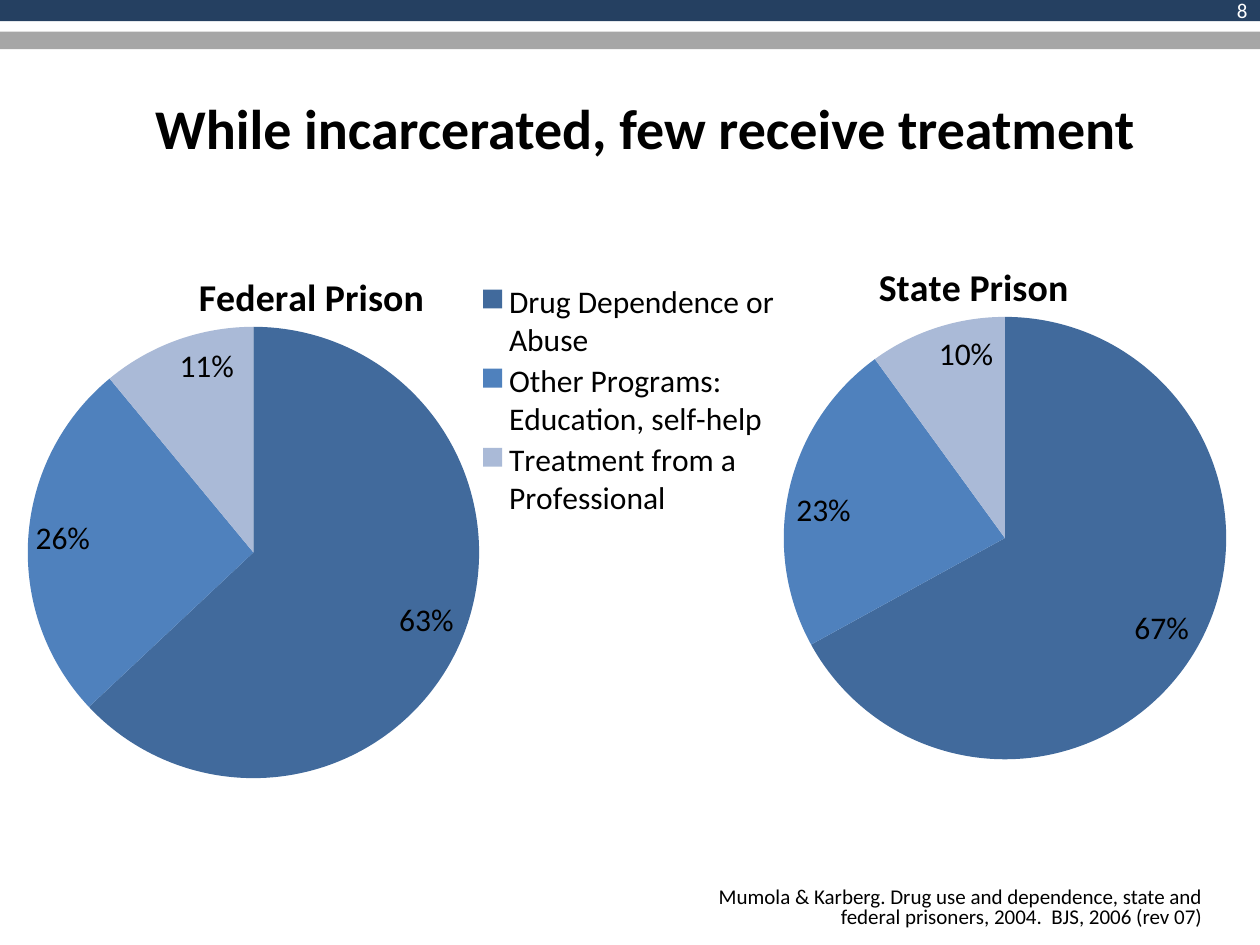
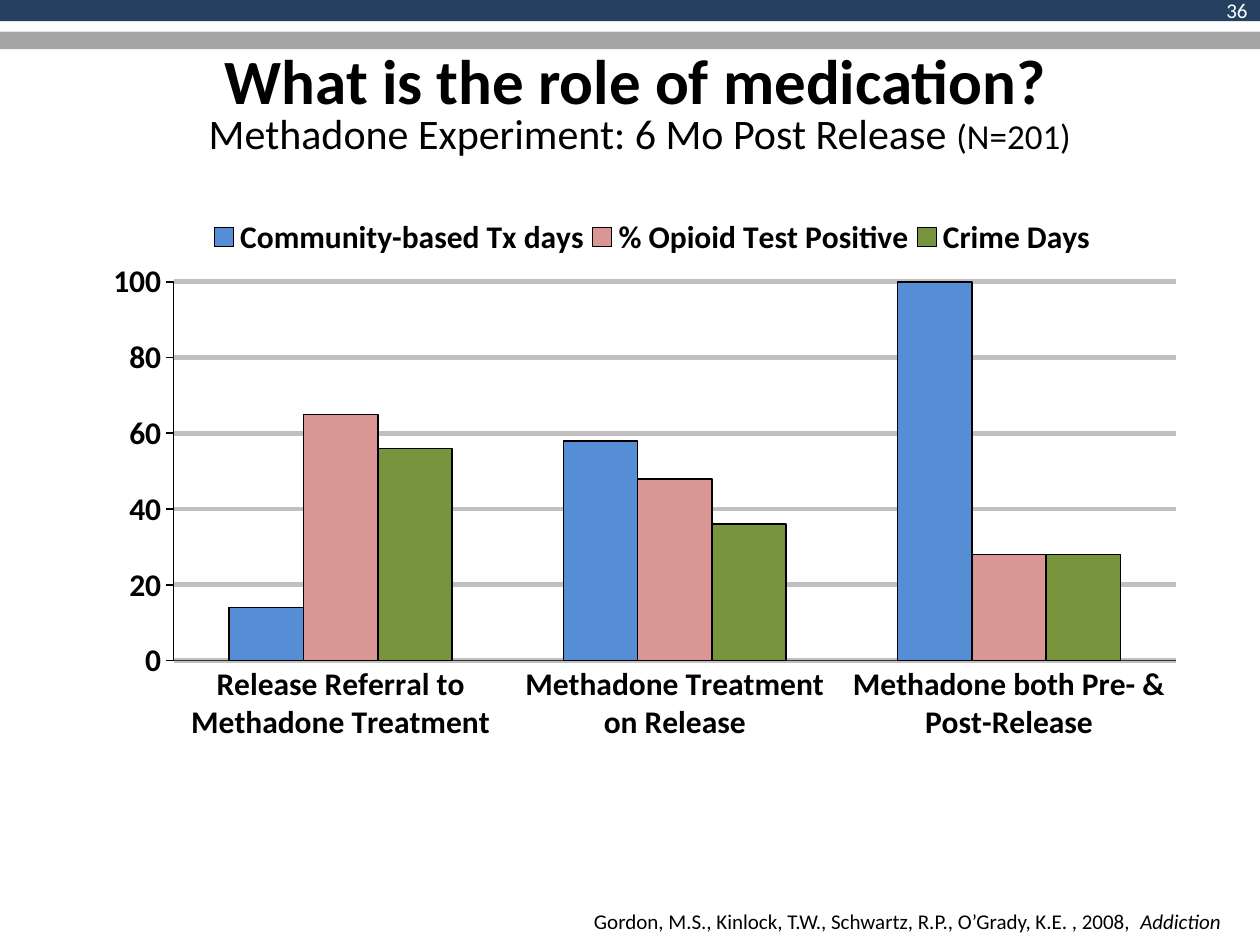
from lxml import etree
from pptx import Presentation
from pptx.chart.data import CategoryChartData
from pptx.dml.color import RGBColor
from pptx.enum.chart import XL_CHART_TYPE, XL_LABEL_POSITION, XL_LEGEND_POSITION, XL_TICK_MARK
from pptx.enum.shapes import MSO_SHAPE
from pptx.enum.text import MSO_ANCHOR, PP_ALIGN
from pptx.oxml.ns import qn
from pptx.util import Cm, Pt

PIE, BARS = XL_CHART_TYPE.PIE, XL_CHART_TYPE.COLUMN_CLUSTERED
IN_END = XL_LABEL_POSITION.INSIDE_END
AT_LEFT, AT_TOP = XL_LEGEND_POSITION.LEFT, XL_LEGEND_POSITION.TOP
NO_TICK, OUT_TICK = XL_TICK_MARK.NONE, XL_TICK_MARK.OUTSIDE
RECT = MSO_SHAPE.RECTANGLE
TOP, MID = MSO_ANCHOR.TOP, MSO_ANCHOR.MIDDLE
CENTER, RIGHT = PP_ALIGN.CENTER, PP_ALIGN.RIGHT

FONT = "Calibri"
BLACK, WHITE = "000000", "FFFFFF"
NAVY, GRAY = "254061", "A6A6A6"
WIDTH, HEIGHT = 25.4, 19.05
BANDS = [(0, 0.43, NAVY), (0.64, 0.35, GRAY)]
SHARES = ["416A9C", "4F81BD", "AABAD7"]
CARE = ["Drug Dependence or Abuse", "Other Programs:  Education, self-help",
        "Treatment from a Professional"]
GROUPS = ["Release Referral to Methadone Treatment", "Methadone Treatment on Release",
          "Methadone both Pre- & Post-Release"]
RESULTS = [("Community-based Tx days", (14, 58, 100), "558ED5"),
           ("% Opioid Test Positive", (65, 48, 28), "D99694"),
           ("Crime Days", (56, 36, 28), "77933C")]


def color(text):
    return RGBColor.from_string(text)


def paint(part, tint):
    part.fill.solid()
    part.fill.fore_color.rgb = color(tint)


def stroke(line, tint, size):
    line.color.rgb = color(tint)
    line.width = Pt(size)


def style(font, size, tint=BLACK, bold=False, slant=False):
    font.name, font.size = FONT, Pt(size)
    font.bold, font.italic = bold, slant
    font.color.rgb = color(tint)


def add_run(para, text, size, **looks):
    run = para.add_run()
    run.text = text
    style(run.font, size, **looks)


def add_text(slide, area, align, runs, anchor=MID, pad=0.13, space=None):
    frame = slide.shapes.add_textbox(*map(Cm, area)).text_frame
    frame.word_wrap = True
    frame.vertical_anchor = anchor
    frame.margin_top = frame.margin_bottom = Cm(pad)
    para = frame.paragraphs[0]
    para.alignment = align
    para.line_spacing = space
    for text, size, looks in runs:
        add_run(para, text, size, **looks)


def add_page(deck, number):
    slide = deck.slides.add_slide(deck.slide_layouts[6])
    for top, tall, tint in BANDS:
        band = slide.shapes.add_shape(RECT, 0, Cm(top), Cm(WIDTH), Cm(tall))
        band.shadow.inherit = False
        paint(band, tint)
        band.line.fill.background()
    add_text(slide, (19.48, 0, 5.92, 0.43), RIGHT, [(number, 12, {"tint": WHITE})], pad=0)
    return slide


def lay_out(chart, name, frame, area):
    node = chart.element.xpath(f"c:chart/c:{name}")[0]
    for old in node.findall(qn("c:layout")):
        node.remove(old)
    layout = etree.Element(qn("c:layout"))
    manual = etree.SubElement(layout, qn("c:manualLayout"))
    left, top, wide, tall = frame
    parts = [("xMode", "edge"), ("yMode", "edge"),
             ("x", (area[0] - left) / wide), ("y", (area[1] - top) / tall)]
    if name == "plotArea":
        parts.insert(0, ("layoutTarget", "inner"))
    if len(area) == 4:
        parts += [("w", area[2] / wide), ("h", area[3] / tall)]
    for key, value in parts:
        etree.SubElement(manual, qn(f"c:{key}")).set("val", str(value))
    lead = node.find(qn("c:tx" if name == "title" else "c:legendPos"))
    node.insert(0 if lead is None else node.index(lead) + 1, layout)


def add_chart(slide, kind, frame, cats, rows, bold=False):
    data = CategoryChartData()
    data.categories = cats
    for name, values in rows:
        data.add_series(name, values)
    chart = slide.shapes.add_chart(kind, *map(Cm, frame), data).chart
    style(chart.font, 18, bold=bold)
    chart.has_title = chart.has_legend = False
    return chart


def add_legend(chart, side, frame, area):
    chart.has_legend = True
    chart.legend.position = side
    chart.legend.include_in_layout = False
    lay_out(chart, "legend", frame, area)


def add_pie(slide, name, values, frame, head, disc):
    chart = add_chart(slide, PIE, frame, CARE, [(name, values)])
    chart.has_title = True
    add_run(chart.chart_title.text_frame.paragraphs[0], name, 21.6, bold=True)
    lay_out(chart, "title", frame, head)
    left, top, size = disc
    lay_out(chart, "plotArea", frame, (left, top, size, size))
    plot = chart.plots[0]
    plot.vary_by_categories = True
    for index, tint in enumerate(SHARES):
        look = plot.series[0].points[index].format
        paint(look, tint)
        look.line.fill.background()
    plot.has_data_labels = True
    labels = plot.data_labels
    labels.show_value, labels.show_percentage = False, True
    labels.number_format, labels.number_format_is_linked = "0%", False
    labels.position = IN_END
    style(labels.font, 18)
    return chart


def add_bars(slide, frame):
    chart = add_chart(slide, BARS, frame, GROUPS, [row[:2] for row in RESULTS], bold=True)
    lay_out(chart, "plotArea", frame, (3.5, 5.68, 20.21, 7.64))
    add_legend(chart, AT_TOP, frame, (4.15, 4.4, 18, 0.75))
    plot = chart.plots[0]
    plot.gap_width, plot.overlap = 150, 0
    plot.vary_by_categories = False
    for series, (_, _, tint) in zip(plot.series, RESULTS):
        paint(series.format, tint)
        stroke(series.format.line, BLACK, 0.91)
    base, scale = chart.category_axis, chart.value_axis
    base.major_tick_mark, scale.major_tick_mark = NO_TICK, OUT_TICK
    stroke(base.format.line, "333333", 0.91)
    stroke(scale.format.line, BLACK, 0.91)
    scale.minimum_scale, scale.maximum_scale, scale.major_unit = 0, 100, 20
    stroke(scale.major_gridlines.format.line, "C0C0C0", 2.73)


def add_prisons(deck):
    slide = add_page(deck, "8")
    add_text(slide, (1.9, 1.75, 22.22, 1.63), CENTER,
             [("While incarcerated, few receive treatment", 32, {"bold": True})])
    frame = (9.4, 4.42, 16, 12)
    state = add_pie(slide, "State Prison", (67, 23, 10), frame,
                    (17.58, 5.1), (15.8, 6.39, 8.92))
    add_legend(state, AT_LEFT, frame, (9.55, 5.65, 6.25, 4.85))
    add_pie(slide, "Federal Prison", (63, 26, 11), (0, 4.65, 9.8, 12),
            (3.87, 5.3), (0.56, 6.59, 9.1))
    source = ("Mumola & Karberg. Drug use and dependence, state and "
              "federal prisoners, 2004.  BJS, 2006 (rev 07)")
    add_text(slide, (13.34, 17.78, 11.15, 1.07), RIGHT, [(source, 12, {})], TOP, space=0.8)


def add_trial(deck):
    slide = add_page(deck, "36")
    add_text(slide, (1.47, 1.9, 22.86, 1.57), CENTER,
             [("Methadone Experiment: 6 Mo Post Release ", 24, {}), ("(N=201)", 20, {})])
    add_text(slide, (1.7, 0.43, 22.22, 2.34), CENTER,
             [("What is the role of medication?", 36, {"bold": True})])
    add_bars(slide, (1.27, 3.81, 22.83, 12.01))
    add_text(slide, (8.05, 18.19, 16.81, 0.76), RIGHT,
             [("Gordon, M.S., Kinlock, T.W., Schwartz, R.P., O’Grady, K.E. , 2008,  ", 12, {}),
              ("Addiction", 12, {"slant": True})], TOP)


def main():
    deck = Presentation()
    deck.slide_width, deck.slide_height = Cm(WIDTH), Cm(HEIGHT)
    add_prisons(deck)
    add_trial(deck)
    deck.save("out.pptx")


if __name__ == "__main__":
    main()
